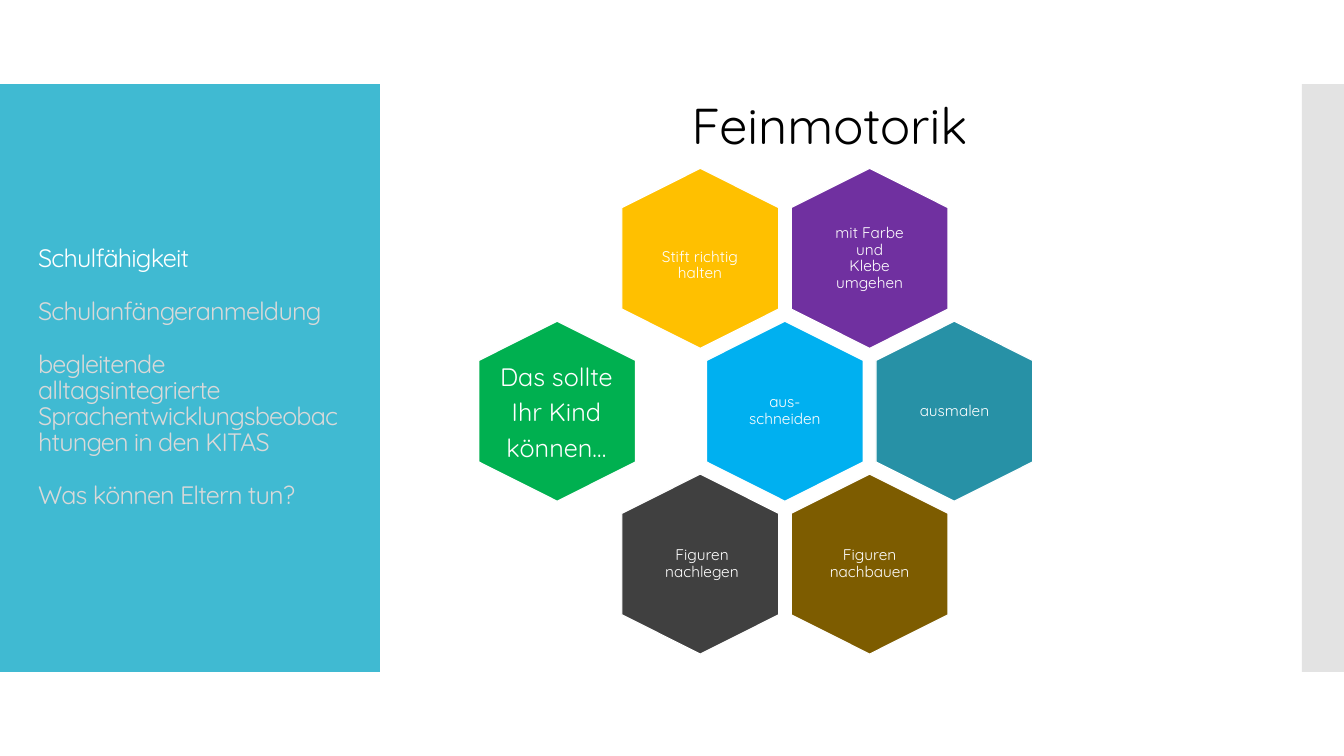
"""Build the Feinmotorik slide with its sidebar and honeycomb of skills."""
from lxml.etree import SubElement
from pptx import Presentation
from pptx.dml.color import RGBColor
from pptx.enum.shapes import MSO_SHAPE
from pptx.enum.text import MSO_ANCHOR, MSO_AUTO_SIZE, PP_ALIGN
from pptx.oxml.ns import qn
from pptx.util import Emu, Inches, Pt

COLUMNS, ROWS = 160, 90
UNIT = Inches(1 / 12)
FONT = "Quicksand"

WHITE = RGBColor(0xFF, 0xFF, 0xFF)
BLACK = RGBColor(0x00, 0x00, 0x00)
MUTED = RGBColor(0xD9, 0xD9, 0xD9)
TURQUOISE = RGBColor(0x40, 0xBA, 0xD2)
SILVER = RGBColor(0xC8, 0xC8, 0xC8)
PURPLE = RGBColor(0x70, 0x30, 0xA0)
YELLOW = RGBColor(0xFF, 0xC0, 0x00)
BLUE = RGBColor(0x00, 0xB0, 0xF0)
TEAL = RGBColor(0x27, 0x91, 0xA6)
BROWN = RGBColor(0x7D, 0x5C, 0x00)
CHARCOAL = RGBColor(0x40, 0x40, 0x40)
GREEN = RGBColor(0x00, 0xB0, 0x50)

COMB_LEFT, COMB_TOP = 74.04, 20.04
HALF_STEP, ROW_STEP = 10.08, 18.2
CELL_WIDTH, CELL_HEIGHT, SHOULDER = 18.66, 21.44, 4.68

CELLS = [
    (2, 0, PURPLE, "mit Farbe und\nKlebe umgehen"),
    (0, 0, YELLOW, None),
    (1, 1, BLUE, "aus-schneiden"),
    (3, 1, TEAL, None),
    (2, 2, BROWN, "Figuren nachbauen"),
    (0, 2, CHARCOAL, None),
    (-1.69, 1, GREEN, None),
]
LABELS = [
    ((77.52, 29.04, 11.64, 5.16), ["Stift richtig\nhalten"], 11),
    ((108, 47.4, 11.28, 3.24), ["ausmalen"], 11),
    ((77.4, 64.56, 12.36, 5.16), ["Figuren\nnachlegen"], 11),
    ((57.84, 42.84, 16.8, 13.56), ["Das sollte", "Ihr Kind", "können…"], 18),
]
TOPICS = [
    "Schulfähigkeit",
    "Schulanfängeranmeldung",
    "begleitende alltagsintegrierte Sprachentwicklungsbeobachtungen in den KITAS",
    "Was können Eltern tun?",
]


def grid(*cells):
    """Turn grid units into slide lengths."""
    return [Emu(round(cell * UNIT)) for cell in cells]


def add_panel(slide, place, color, alpha=None):
    """Add a plain rectangle, see-through if alpha is given in percent."""
    panel = slide.shapes.add_shape(MSO_SHAPE.RECTANGLE, *grid(*place))
    panel.shadow.inherit = False
    panel.line.fill.background()
    panel.fill.solid()
    panel.fill.fore_color.rgb = color
    if alpha is not None:
        fill_color = panel._element.spPr.find(".//" + qn("a:srgbClr"))
        SubElement(fill_color, qn("a:alpha"), val=str(alpha * 1000))


def write(frame, texts, size, color, align=PP_ALIGN.CENTER, spacing=None):
    """Write one paragraph per text and return the paragraphs."""
    paras = [frame.paragraphs[0]] + [frame.add_paragraph() for _ in texts[1:]]
    for para, text in zip(paras, texts):
        para.text = text
        para.alignment = align
        para.line_spacing = spacing
        para.font.name = FONT
        para.font.size = Pt(size)
        para.font.color.rgb = color
    return paras


def add_text(slide, place, wrap=True):
    """Add an empty text box and return its frame."""
    frame = slide.shapes.add_textbox(*grid(*place)).text_frame
    frame.word_wrap = wrap
    return frame


def add_sidebar(slide):
    """List the topics, with the current one highlighted."""
    frame = add_text(slide, (3.36, 21.6, 38.64, 53.52))
    frame.vertical_anchor = MSO_ANCHOR.MIDDLE
    frame.margin_bottom = Inches(0.6)
    paras = write(frame, TOPICS, 18, MUTED, PP_ALIGN.LEFT, 0.86)
    paras[0].font.color.rgb = WHITE
    for para in paras:
        para._p.get_or_add_pPr().get_or_add_defRPr().set("spc", "-60")
    for para in paras[1:]:
        para.space_before = Pt(19.4)


def add_cell(slide, column, row, color, text):
    """Add one hexagon of the honeycomb, with text if there is any."""
    left = COMB_LEFT + column * HALF_STEP
    top = COMB_TOP + row * ROW_STEP
    middle, right, bottom = left + CELL_WIDTH / 2, left + CELL_WIDTH, top + CELL_HEIGHT
    upper, lower = top + SHOULDER, bottom - SHOULDER
    corners = [(right, upper), (right, lower), (middle, bottom), (left, lower), (left, upper)]
    builder = slide.shapes.build_freeform(*grid(middle, top))
    builder.add_line_segments([grid(*corner) for corner in corners])
    cell = builder.convert_to_shape()
    cell.shadow.inherit = False
    cell.fill.solid()
    cell.fill.fore_color.rgb = color
    cell.line.color.rgb = WHITE
    cell.line.width = Pt(0.85)
    if text:
        frame = cell.text_frame
        frame.word_wrap = True
        frame.vertical_anchor = MSO_ANCHOR.MIDDLE
        frame.margin_left = frame.margin_right = Inches(0.29)
        frame.margin_top = frame.margin_bottom = Inches(0.32)
        write(frame, [text], 11, WHITE, spacing=0.9)


def add_label(slide, place, texts, size):
    """Add a free-standing label over a hexagon."""
    frame = add_text(slide, place, wrap=False)
    frame.auto_size = MSO_AUTO_SIZE.SHAPE_TO_FIT_TEXT
    for para in write(frame, texts, size, WHITE, spacing=0.9):
        para.space_after = Pt(round(size * 0.32, 1))


def main():
    """Build and save the deck."""
    deck = Presentation()
    deck.slide_width, deck.slide_height = grid(COLUMNS, ROWS)
    slide = deck.slides.add_slide(deck.slide_layouts[6])
    add_panel(slide, (0, 10, 45.24, 70), TURQUOISE)
    add_panel(slide, (155, 10, 5, 70), SILVER, alpha=50)
    add_sidebar(slide)
    title = add_text(slide, (48.96, 10.56, 99.6, 8.52))
    title.auto_size = MSO_AUTO_SIZE.SHAPE_TO_FIT_TEXT
    write(title, ["Feinmotorik"], 36, BLACK)
    for cell in CELLS:
        add_cell(slide, *cell)
    for label in LABELS:
        add_label(slide, *label)
    deck.save("out.pptx")


if __name__ == "__main__":
    main()
